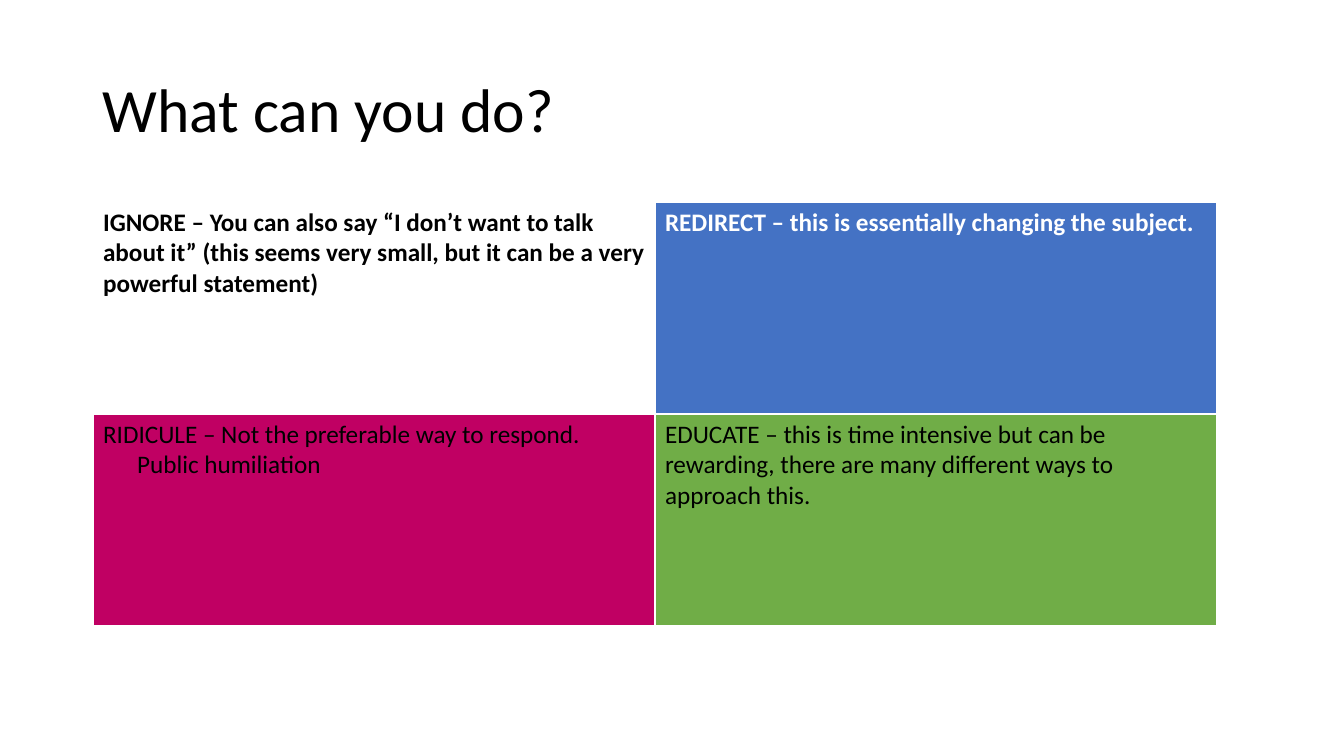
from pptx import Presentation
from pptx.dml.color import RGBColor
from pptx.enum.text import MSO_ANCHOR
from pptx.util import Emu, Pt

MIDDLE = MSO_ANCHOR.MIDDLE
FONT = "Calibri"
BLACK, WHITE = "000000", "FFFFFF"

TITLE = "What can you do?"
# Each cell: fill, text colour, bold, lines as (text, indent in px)
ROWS = [
    [
        (WHITE, BLACK, True, [
            ("IGNORE – You can also say “I don’t want to talk about it” "
             "(this seems very small, but it can be a very powerful statement)", 0)]),
        ("4472C4", WHITE, True, [
            ("REDIRECT – this is essentially changing the subject.", 0)]),
    ],
    [
        ("C00063", BLACK, False, [
            ("RIDICULE – Not the preferable way to respond.", 0),
            ("Public humiliation", 34)]),
        ("70AD47", BLACK, False, [
            ("EDUCATE – this is time intensive but can be rewarding, "
             "there are many different ways to approach this.", 0)]),
    ],
]
SLIDE = (1344, 756)
TITLE_BOX = (93, 40, 1159, 146)
LEFT, TOP, COL, ROW = 93, 202, 562, 212


def px(n):
    return Emu(round(n * 12192000 / SLIDE[0]))


def rgb(code):
    return RGBColor.from_string(code)


def style(para, size, color, bold=False):
    font = para.font
    font.name, font.size, font.bold = FONT, Pt(size), bold
    font.color.rgb = rgb(color)


def add_title(slide):
    frame = slide.shapes.add_textbox(*map(px, TITLE_BOX)).text_frame
    frame.word_wrap = True
    frame.vertical_anchor = MIDDLE
    para = frame.paragraphs[0]
    para.text = TITLE
    para.line_spacing = 0.9
    style(para, 44, BLACK)


def fill_cell(cell, fill, color, bold, lines):
    cell.fill.solid()
    cell.fill.fore_color.rgb = rgb(fill)
    frame = cell.text_frame
    for i, (text, indent) in enumerate(lines):
        para = frame.add_paragraph() if i else frame.paragraphs[0]
        para.text = text
        style(para, 18, color, bold)
        if indent:
            para._p.get_or_add_pPr().set("marL", str(px(indent)))


def add_grid(slide):
    rows, cols = len(ROWS), len(ROWS[0])
    box = (LEFT, TOP, cols * COL, rows * ROW)
    table = slide.shapes.add_table(rows, cols, *map(px, box)).table
    for r, row in enumerate(ROWS):
        for c, cell in enumerate(row):
            fill_cell(table.cell(r, c), *cell)


def main():
    deck = Presentation()
    deck.slide_width, deck.slide_height = map(px, SLIDE)
    slide = deck.slides.add_slide(deck.slide_layouts[6])
    add_title(slide)
    add_grid(slide)
    deck.save("out.pptx")


if __name__ == "__main__":
    main()
